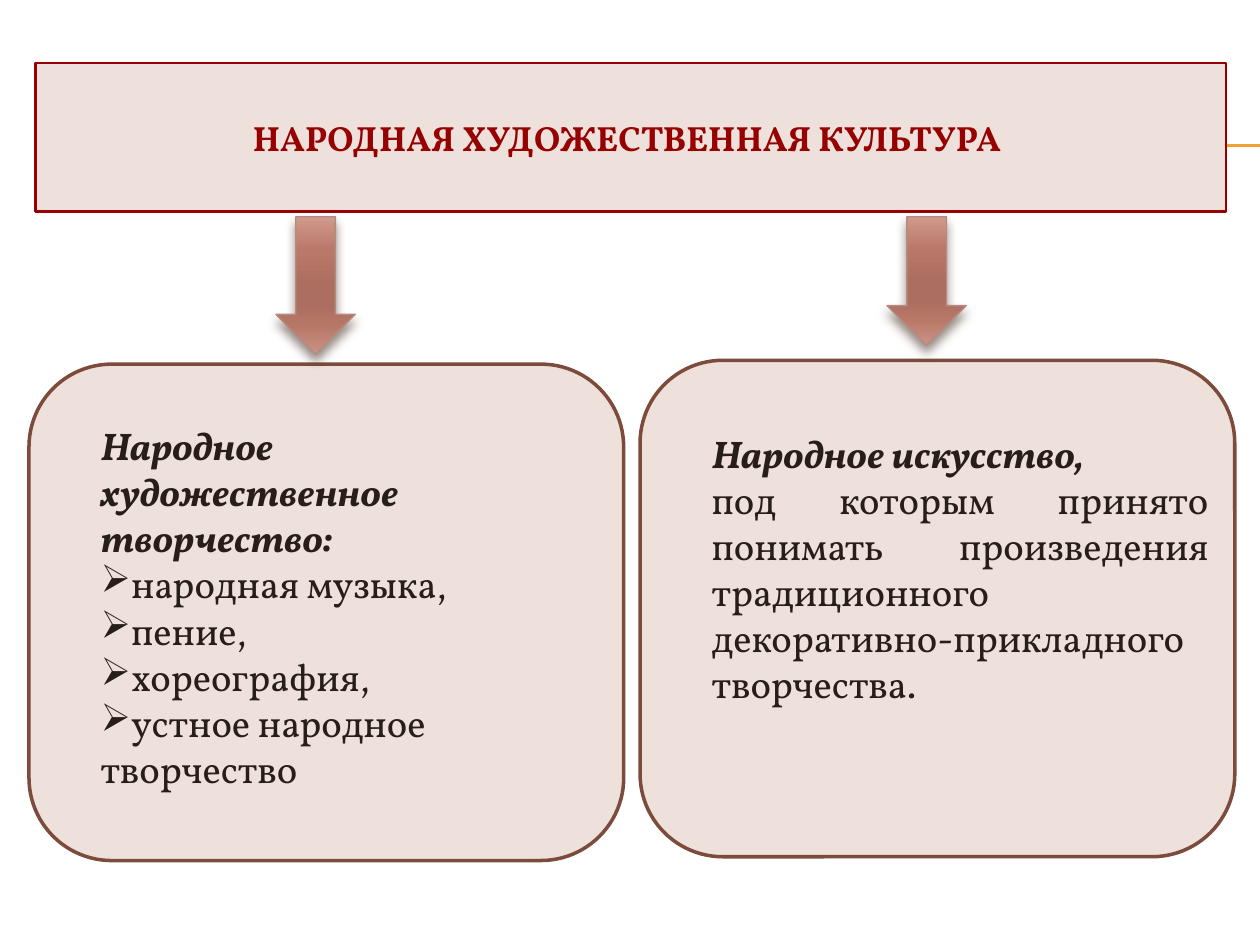
from dataclasses import dataclass

from lxml import etree
from pptx import Presentation
from pptx.dml.color import RGBColor
from pptx.enum.shapes import MSO_CONNECTOR, MSO_SHAPE
from pptx.enum.text import MSO_ANCHOR, PP_ALIGN
from pptx.oxml.ns import qn
from pptx.util import Inches, Pt

RECT, ROUND, ARROW = MSO_SHAPE.RECTANGLE, MSO_SHAPE.ROUNDED_RECTANGLE, MSO_SHAPE.DOWN_ARROW
STRAIGHT = MSO_CONNECTOR.STRAIGHT
LEFT, CENTER, JUSTIFY = PP_ALIGN.LEFT, PP_ALIGN.CENTER, PP_ALIGN.JUSTIFY
TOP, MIDDLE = MSO_ANCHOR.TOP, MSO_ANCHOR.MIDDLE
COLS, ROWS, CELL = 100, 75, 0.1


@dataclass(frozen=True)
class Theme:
    """Colours, font and type sizes of the slide."""
    font: str = "Vollkorn"
    title_size: int = 20
    body_size: int = 22
    title: str = "960000"
    body: str = "271E18"
    panel: str = "EEE0DB"
    panel_line: str = "7C4B3B"
    rule: str = "F0A22E"
    arrow_line: str = "B58B80"
    shadow: str = "4E3B30"
    arrow: tuple = ((0, "D09A8D"), (25, "B97869"), (50, "AB6E60"),
                    (65, "AB6E60"), (80, "B87868"), (100, "CA9386"))


def grid(*cells):
    """Turn grid cells into lengths."""
    return [Inches(c * CELL) for c in cells]


def rgb(color):
    """Turn a hex string into a colour."""
    return RGBColor.from_string(color)


def child(parent, tag, **attrs):
    """Add a drawing element with the given attributes."""
    return etree.SubElement(parent, qn(tag), {k: str(v) for k, v in attrs.items()})


def write(p, text, font, size, color, bold=False, italic=False, align=LEFT, bullet=None):
    """Fill a paragraph with one formatted run."""
    p.alignment = align
    if bullet:
        child(p._p.get_or_add_pPr(), "a:buChar", char=bullet)
    r = p.add_run()
    r.text = text
    f = r.font
    f.name, f.size, f.bold, f.italic = font, Pt(size), bold, italic
    f.color.rgb = rgb(color)


class Deck:
    """Holds the theme and the current slide."""

    def __init__(self, theme):
        """Open a presentation with one blank slide."""
        self.theme = theme
        self.prs = Presentation()
        self.prs.slide_width, self.prs.slide_height = grid(COLS, ROWS)
        self.s = self.prs.slides.add_slide(self.prs.slide_layouts[6])

    def rule(self, x1, x2, y):
        """Draw a thin horizontal line."""
        line = self.s.shapes.add_connector(STRAIGHT, *grid(x1, y, x2, y))
        line.line.color.rgb = rgb(self.theme.rule)
        line.line.width = Pt(0.75)
        child(line._element.spPr, "a:effectLst")

    def box(self, kind, at, line, width):
        """Draw an outlined panel."""
        sp = self.s.shapes.add_shape(kind, *grid(*at))
        sp.shadow.inherit = False
        sp.fill.solid()
        sp.fill.fore_color.rgb = rgb(self.theme.panel)
        sp.line.color.rgb = rgb(line)
        sp.line.width = Pt(width)
        return sp

    def title(self, text, at):
        """Draw the heading panel."""
        t = self.theme
        tf = self.box(RECT, at, t.title, 1.5).text_frame
        tf.word_wrap, tf.vertical_anchor = True, MIDDLE
        write(tf.paragraphs[0], text, t.font, t.title_size, t.title, bold=True, align=CENTER)

    def arrow(self, at):
        """Draw a shaded down arrow with a soft shadow."""
        t = self.theme
        sp = self.box(ARROW, at, t.arrow_line, 0.79)
        sp.fill.gradient()
        sp.fill.gradient_angle = 270
        stops = sp._element.spPr.find(".//" + qn("a:gsLst"))
        stops.clear()
        for pos, color in t.arrow:
            child(child(stops, "a:gs", pos=pos * 1000), "a:srgbClr", val=color)
        effects = sp._element.spPr.find(qn("a:effectLst"))
        shadow = child(effects, "a:outerShdw", blurRad=Pt(6), dist=Pt(4),
                       dir=5400000, rotWithShape=0)
        child(child(shadow, "a:srgbClr", val=t.shadow), "a:alpha", val=60000)

    def text(self, at, heading, items, **style):
        """Write a bold italic heading followed by plain paragraphs."""
        t = self.theme
        tf = self.s.shapes.add_textbox(*grid(*at)).text_frame
        tf.word_wrap, tf.vertical_anchor = True, TOP
        write(tf.paragraphs[0], heading, t.font, t.body_size, t.body, bold=True, italic=True)
        for item in items:
            write(tf.add_paragraph(), item, t.font, t.body_size, t.body, **style)


def main():
    """Build the slide and save it."""
    deck = Deck(Theme())
    for y in (11.5, 11.6):
        deck.rule(5.6, COLS, y)
    deck.title("НАРОДНАЯ ХУДОЖЕСТВЕННАЯ КУЛЬТУРА ", (2.8, 5, 94.5, 11.8))

    branches = (
        (28.9, 10.9, (33, 36.7, 30.6), "Народное художественное творчество:",
         ("народная музыка,", "пение,", "хореография,", "устное народное творчество"),
         {"bullet": "➢"}),
        (28.6, 10.2, (33.6, 41.4, 28.1), "Народное искусство,",
         ("под которым принято понимать произведения традиционного "
          "декоративно-прикладного творчества.",),
         {"align": JUSTIFY}),
    )
    for i, (top, length, (y, w, h), heading, items, style) in enumerate(branches):
        x = i * 48.5
        deck.box(ROUND, (x + 2.3, top, 47.2, 39.4), deck.theme.panel_line, 2)
        deck.arrow((x + 21.9, 17.2, 6.3, length))
        deck.text((x + 7, y, w, h), heading, items, **style)
    deck.prs.save("out.pptx")


if __name__ == "__main__":
    main()
